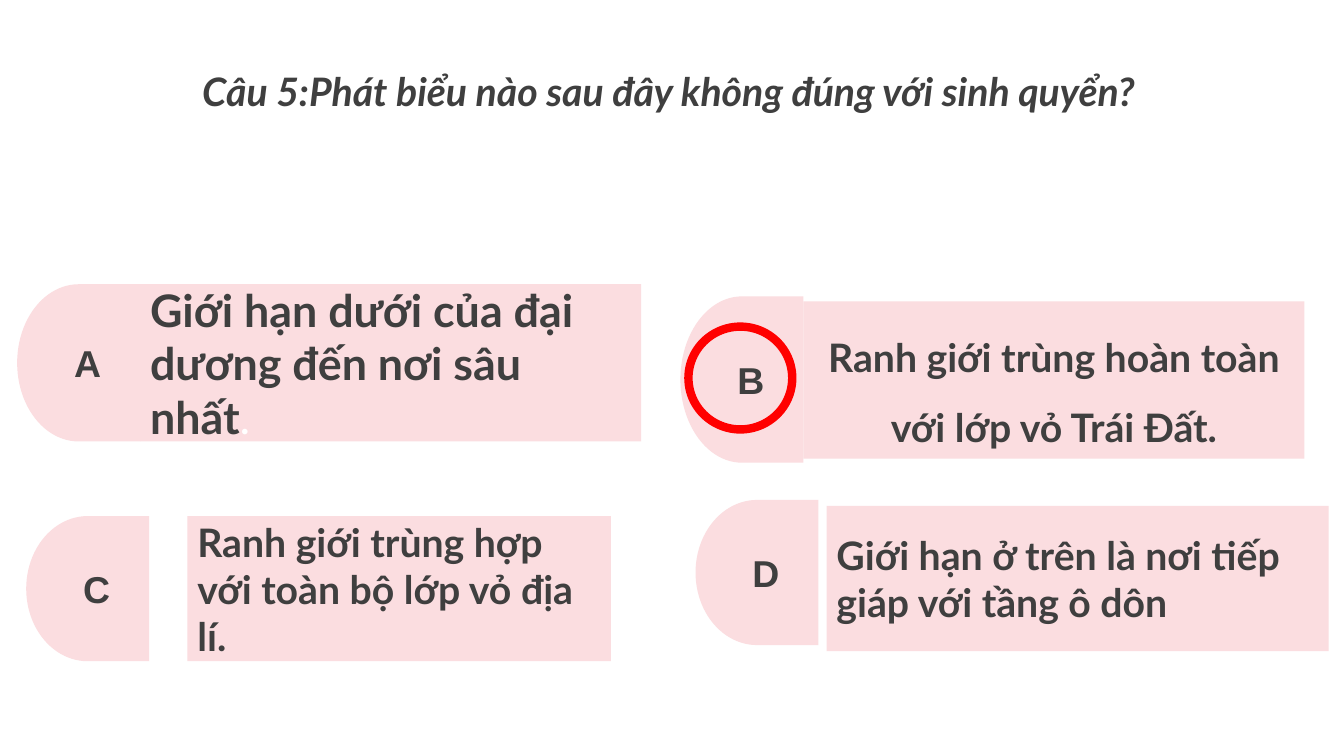
from dataclasses import dataclass

from pptx import Presentation
from pptx import util as u
from pptx.dml.color import RGBColor
from pptx.enum import shapes, text


@dataclass(frozen=True)
class Theme:
    """Colours, fonts and type sizes of the quiz."""
    ink: str = "3F3F3F"
    pink: str = "FBDDE0"
    white: str = "FFFFFF"
    red: str = "FF0000"
    body: str = "Lato"
    label: str = "Arial"
    small: float = 26.7
    mid: float = 28
    big: float = 32
    ring: float = 6


class Quiz:
    """A slide on a grid of tenth-inch cells, with its theme."""

    cols, rows = 133.33, 75
    cell = u.Inches(0.1)

    def __init__(self, deck, theme):
        """Size the deck and add a title-only slide."""
        deck.slide_width = self.span(self.cols)
        deck.slide_height = self.span(self.rows)
        self.theme = theme
        self.slide = deck.slides.add_slide(deck.slide_layouts[5])

    def span(self, cells):
        """Turn grid cells into a length."""
        return u.Emu(round(cells * self.cell))

    def add_words(self, par, words, size, font, color=None, bold=True, slant=False):
        """Add one styled run."""
        run = par.add_run()
        run.text = words
        style = run.font
        style.name, style.size = font, u.Pt(size)
        style.bold, style.italic = bold, slant
        style.color.rgb = RGBColor.from_string(color or self.theme.ink)

    def title(self, words, box):
        """Place and fill the title."""
        head = self.slide.shapes.title
        head.left, head.top, head.width, head.height = map(self.span, box)
        frame = head.text_frame
        frame.margin_left = frame.margin_right = 0
        frame.margin_top = frame.margin_bottom = 0
        frame.word_wrap = True
        frame.auto_size = text.MSO_AUTO_SIZE.NONE
        frame.vertical_anchor = text.MSO_ANCHOR.TOP
        par = frame.paragraphs[0]
        par.alignment = text.PP_ALIGN.CENTER
        par.line_spacing = u.Pt(59.7)
        self.add_words(par, words, self.theme.mid, self.theme.body, slant=True)

    def shape(self, kind, box, fill=None):
        """Add a plain shape without shadow or line."""
        item = self.slide.shapes.add_shape(kind, *map(self.span, box))
        item.shadow.inherit = False
        item.line.fill.background()
        if fill:
            item.fill.solid()
            item.fill.fore_color.rgb = RGBColor.from_string(fill)
        else:
            item.fill.background()
        return item

    def panel(self, kind, box, align):
        """Add a pink panel and return it with its paragraph."""
        item = self.shape(kind, box, self.theme.pink)
        frame = item.text_frame
        frame.word_wrap = True
        frame.vertical_anchor = text.MSO_ANCHOR.MIDDLE
        par = frame.paragraphs[0]
        par.alignment = align
        return item, par

    def tab(self, mark, left, top, high):
        """Add a round-ended tab with its letter."""
        item, par = self.panel(shapes.MSO_SHAPE.FLOWCHART_DELAY,
                               (left, top, 12.2, high), text.PP_ALIGN.CENTER)
        item._element.spPr.xfrm.set("flipH", "1")
        self.add_words(par, mark, self.theme.small, self.theme.label)

    def answer(self, words, box, size, align=text.PP_ALIGN.LEFT, space=None):
        """Add an answer panel and return its paragraph."""
        par = self.panel(shapes.MSO_SHAPE.RECTANGLE, box, align)[1]
        par.line_spacing = space
        self.add_words(par, words, size, self.theme.body)
        return par

    def ring(self, box):
        """Circle the right answer."""
        item = self.shape(shapes.MSO_SHAPE.OVAL, box)
        item.line.color.rgb = RGBColor.from_string(self.theme.red)
        item.line.width = u.Pt(self.theme.ring)


def main():
    """Build and save the quiz slide."""
    deck = Presentation()
    theme = Theme()
    quiz = Quiz(deck, theme)
    quiz.title("Câu 5:Phát biểu nào sau đây không đúng với sinh quyển?",
               (4.3, 3.1, 124, 15.6))

    for mark, left, top, high in (("A", 1.7, 28.2, 15.6), ("B", 67.5, 29.4, 16.5),
                                  ("C", 2.6, 51.2, 14.4), ("D", 69, 49.6, 14.4)):
        quiz.tab(mark, left, top, high)

    first = quiz.answer("Giới hạn dưới của đại dương đến nơi sâu nhất",
                        (13.9, 28.2, 49.7, 15.6), theme.big)
    quiz.add_words(first, ".", theme.big, theme.body, theme.white, bold=False)
    quiz.answer("Ranh giới trùng hoàn toàn với lớp vỏ Trái Đất.",
                (79.7, 29.9, 49.7, 15.6), theme.mid, text.PP_ALIGN.CENTER, 1.5)
    quiz.answer("Ranh giới trùng hợp với toàn bộ lớp vỏ địa lí.",
                (18.6, 51.2, 42, 14.4), theme.mid)
    quiz.answer("Giới hạn ở trên là nơi tiếp giáp với tầng ô dôn",
                (82, 50.2, 49.8, 14.4), theme.mid)
    quiz.ring((68.3, 32.4, 10.3, 10.2))
    deck.save("out.pptx")


if __name__ == "__main__":
    main()
